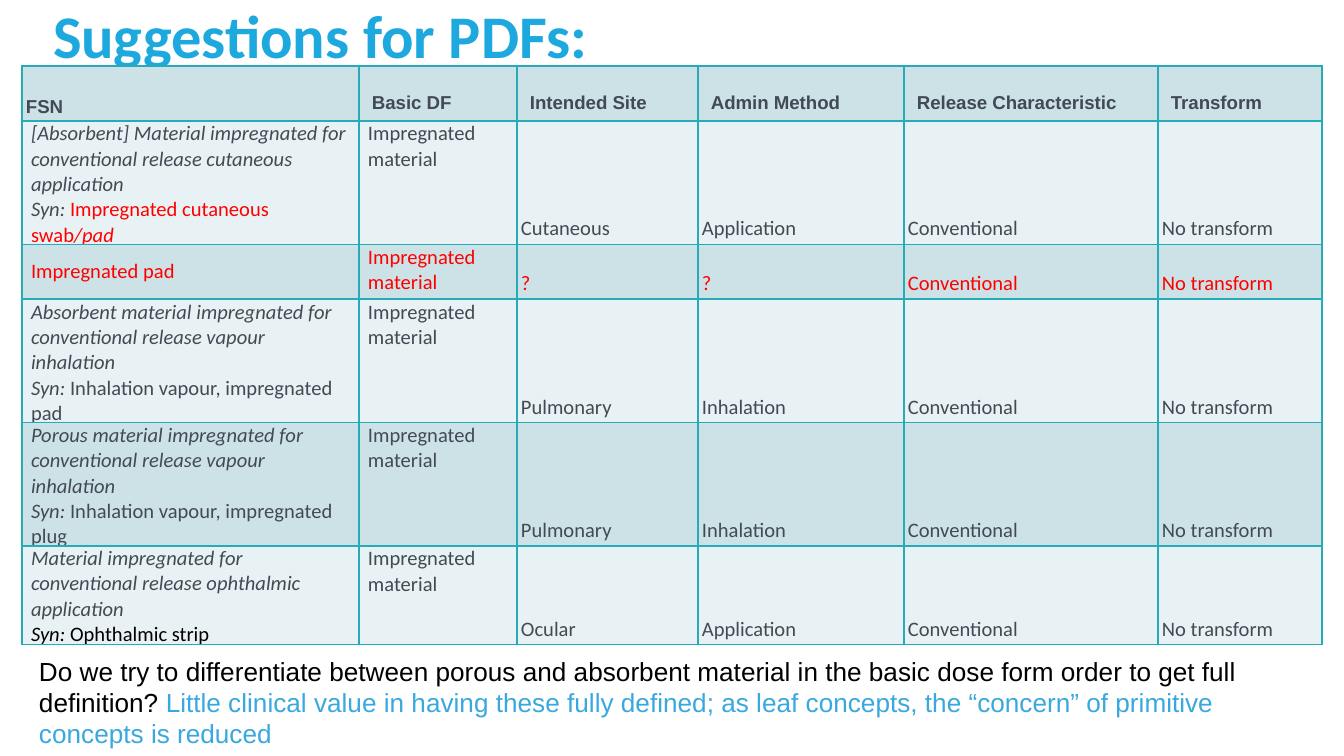
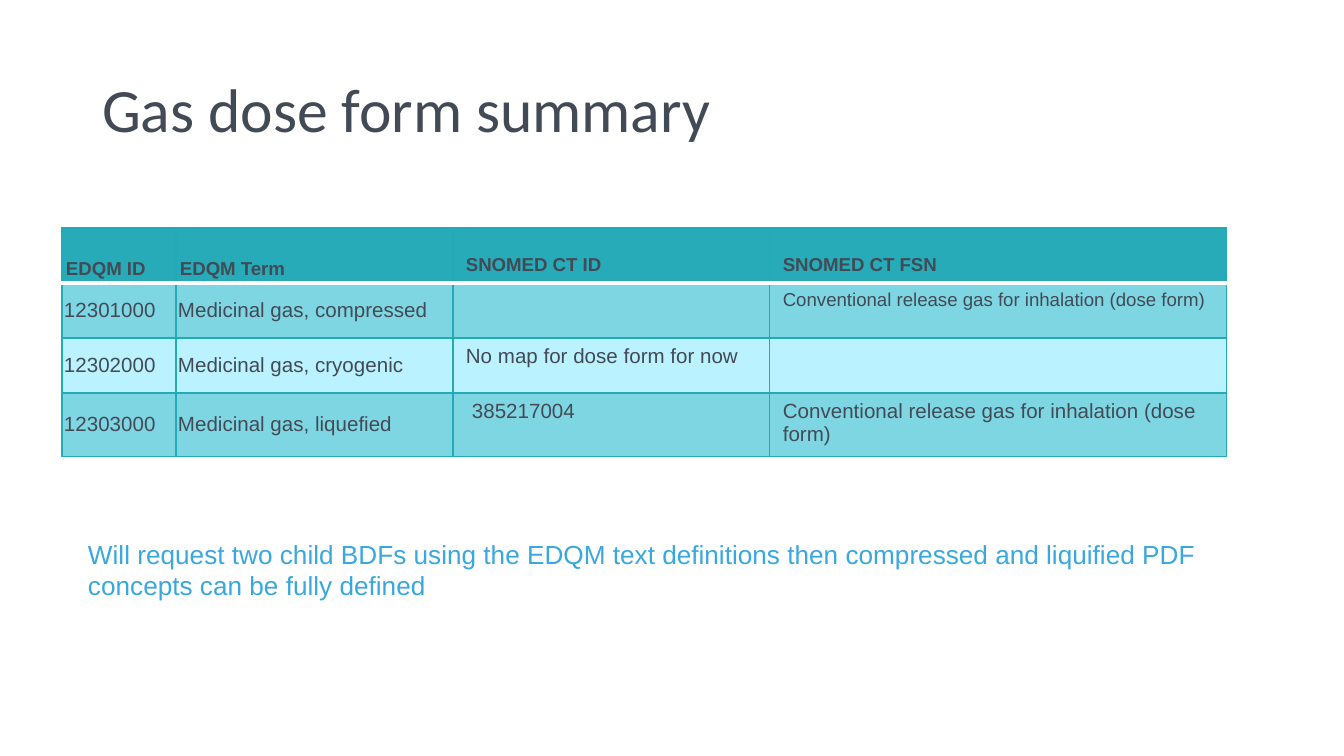
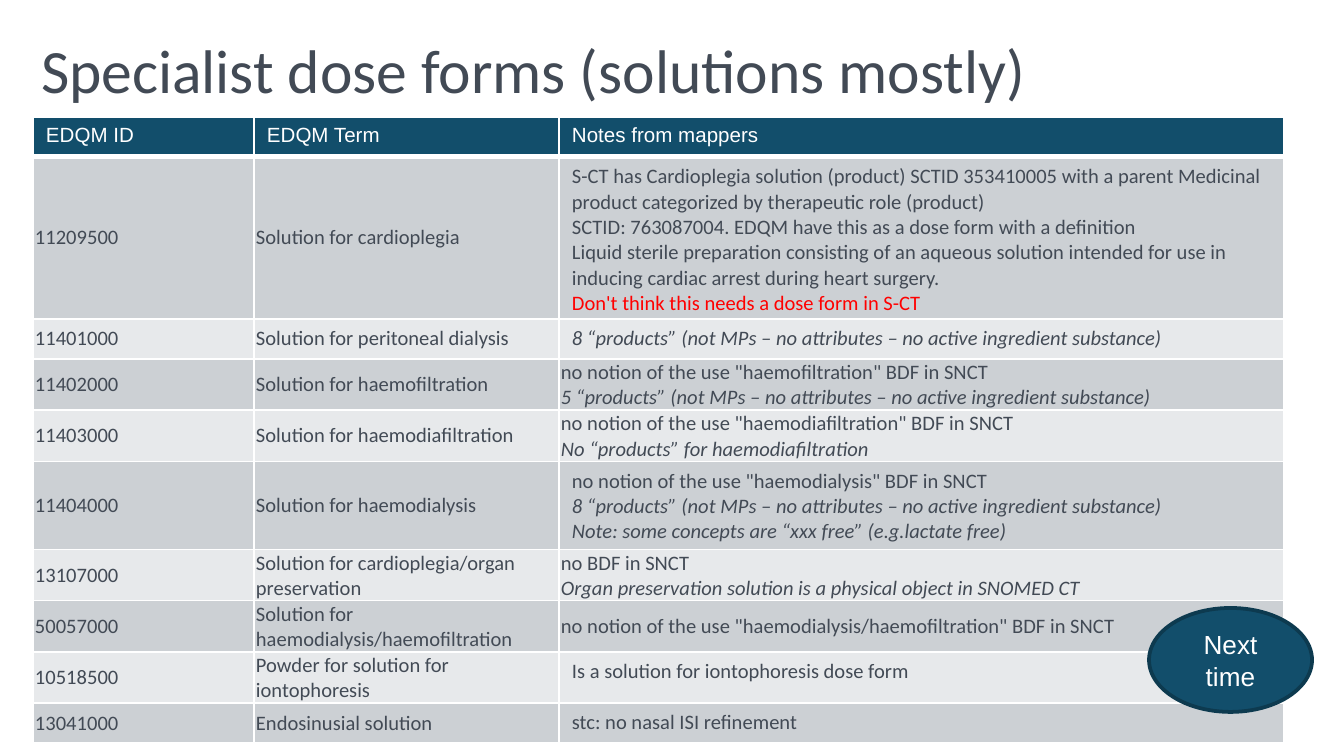
from copy import deepcopy
from dataclasses import dataclass, replace
from typing import NamedTuple

from lxml import etree
from pptx import Presentation
from pptx.dml.color import RGBColor
from pptx.enum.shapes import MSO_SHAPE
from pptx.enum.text import MSO_ANCHOR, MSO_AUTO_SIZE, PP_ALIGN
from pptx.oxml.ns import qn
from pptx.util import Emu, Pt

OVAL = MSO_SHAPE.OVAL
TOP, MIDDLE, BOTTOM = MSO_ANCHOR.TOP, MSO_ANCHOR.MIDDLE, MSO_ANCHOR.BOTTOM
FIT_SHAPE = MSO_AUTO_SIZE.SHAPE_TO_FIT_TEXT
CENTER = PP_ALIGN.CENTER
EMU_PER_PX = 914400 / 134.4


@dataclass(frozen=True)
class TextStyle:
    font: str
    size: float
    color: str
    bold: bool = False
    italic: bool = False


@dataclass(frozen=True)
class Theme:
    ink: str = "424A55"
    black: str = "000000"
    white: str = "FFFFFF"
    red: str = "FF0000"
    sky: str = "39A8DE"
    bright: str = "1DA8DE"
    teal: str = "27ABB8"
    teal_line: str = "23AAB7"
    teal_bands: tuple[str, str] = ("7ED6E2", "BAF2FF")
    pale_bands: tuple[str, str] = ("E8F1F3", "CDE2E6")
    grey_bands: tuple[str, str] = ("CCD0D4", "E7E9EB")
    navy: str = "124E6B"
    navy_line: str = "0D3A4F"
    sans: str = "Arial"
    humanist: str = "Calibri"
    title_size: float = 33
    accent_title_size: float = 32.4
    note_size: float = 14
    cell_size: float = 11
    small_size: float = 10


THEME = Theme()
TITLE = TextStyle(THEME.humanist, THEME.title_size, THEME.ink)
ACCENT_TITLE = TextStyle(THEME.humanist, THEME.accent_title_size, THEME.bright, bold=True)
NOTE = TextStyle(THEME.sans, THEME.note_size, THEME.sky)
QUESTION = replace(NOTE, color=THEME.black)
BADGE = replace(NOTE, color=THEME.white)
BODY = TextStyle(THEME.humanist, THEME.cell_size, THEME.ink)
ITALIC = replace(BODY, italic=True)
RED = replace(BODY, color=THEME.red)
RED_ITALIC = replace(RED, italic=True)
BLACK = replace(BODY, color=THEME.black)
BLACK_ITALIC = replace(BLACK, italic=True)
SANS = replace(BODY, font=THEME.sans)
SMALL_SANS = replace(SANS, size=THEME.small_size)
HEADING = replace(SMALL_SANS, bold=True)
WHITE_HEADING = replace(SANS, color=THEME.white)


class Box(NamedTuple):
    left: int
    top: int
    width: int
    height: int


class Pad(NamedTuple):
    side: int
    end: int


ROOMY, TITLE_PAD, SIDE_ONLY = Pad(13, 7), Pad(9, 5), Pad(9, 0)
NARROW, TIGHT, INDENTED = Pad(4, 3), Pad(2, 1), Pad(19, 7)


class Run(NamedTuple):
    text: str
    style: TextStyle


Paragraphs = list[list[Run]]


@dataclass(frozen=True)
class Cell:
    paragraphs: Paragraphs
    pad: Pad = ROOMY
    anchor: MSO_ANCHOR = TOP


class Line(NamedTuple):
    color: str
    points: float


@dataclass(frozen=True)
class Grid:
    left: int
    top: int
    columns: list[int]
    row_heights: list[int]
    header_fill: str
    bands: tuple[str, str]
    line: Line
    header_rule: Line


def px(count: int) -> Emu:
    return Emu(round(count * EMU_PER_PX))


def rgb(color: str) -> RGBColor:
    return RGBColor.from_string(color)


def write_run(paragraph, run: Run) -> None:
    """Add a run, turning each newline in it into a line break of the same size."""
    style = run.style
    font_values = {"name": style.font, "size": Pt(style.size),
                   "bold": style.bold, "italic": style.italic}
    for number, line in enumerate(run.text.split("\n")):
        if number:
            paragraph.add_line_break()
            paragraph._p[-1].append(deepcopy(text_run._r.get_or_add_rPr()))
        text_run = paragraph.add_run()
        text_run.text = line
        for name, value in font_values.items():
            setattr(text_run.font, name, value)
        text_run.font.color.rgb = rgb(style.color)


def write(frame, paragraphs: Paragraphs, **paragraph_format) -> None:
    for number, runs in enumerate(paragraphs):
        paragraph = frame.add_paragraph() if number else frame.paragraphs[0]
        for name, value in paragraph_format.items():
            setattr(paragraph, name, value)
        for run in runs:
            write_run(paragraph, run)


def set_margins(target, pad: Pad) -> None:
    margins = {"left": pad.side, "right": pad.side, "top": pad.end, "bottom": pad.end}
    for side, length in margins.items():
        setattr(target, f"margin_{side}", px(length))


def add_text(slide, box: Box, runs: list[Run], pad: Pad = ROOMY,
             frame_format: dict | None = None, **paragraph_format) -> None:
    frame = slide.shapes.add_textbox(*map(px, box)).text_frame
    for name, value in {"word_wrap": True, **(frame_format or {})}.items():
        setattr(frame, name, value)
    set_margins(frame, pad)
    write(frame, [runs], **paragraph_format)


def add_title(slide, box: Box, text: str, style: TextStyle = TITLE) -> None:
    add_text(slide, box, [Run(text, style)], TITLE_PAD,
             {"vertical_anchor": MIDDLE}, line_spacing=0.9)


def add_note(slide, box: Box, runs: list[Run]) -> None:
    add_text(slide, box, runs, frame_format={"auto_size": FIT_SHAPE})


def add_badge(slide, box: Box, text: str) -> None:
    badge = slide.shapes.add_shape(OVAL, *map(px, box))
    badge.shadow.inherit = False
    badge.fill.solid()
    badge.fill.fore_color.rgb = rgb(THEME.navy)
    badge.line.color.rgb = rgb(THEME.navy_line)
    badge.line.width = Pt(2)
    badge.text_frame.word_wrap = True
    badge.text_frame.vertical_anchor = MIDDLE
    write(badge.text_frame, [[Run(text, BADGE)]], alignment=CENTER)


def add_border(cell, side: str, line: Line) -> None:
    properties = cell._tc.get_or_add_tcPr()
    border = etree.SubElement(properties, qn(f"a:ln{side}"), w=str(Pt(line.points)))
    fill = etree.SubElement(border, qn("a:solidFill"))
    etree.SubElement(fill, qn("a:srgbClr"), val=line.color)


def add_grid(slide, grid: Grid, rows: list[list[Cell]]) -> None:
    box = Box(grid.left, grid.top, sum(grid.columns), sum(grid.row_heights))
    table = slide.shapes.add_table(len(rows), len(grid.columns), *map(px, box)).table
    table.first_row = table.horz_banding = False
    for column, width in zip(table.columns, grid.columns):
        column.width = px(width)
    for r, (cells, height) in enumerate(zip(rows, grid.row_heights)):
        table.rows[r].height = px(height)
        borders = {"L": grid.line, "R": grid.line,
                   "T": grid.header_rule if r == 1 else grid.line,
                   "B": grid.header_rule if r == 0 else grid.line}
        for c, content in enumerate(cells):
            cell = table.cell(r, c)
            for side, line in borders.items():
                add_border(cell, side, line)
            cell.fill.solid()
            cell.fill.fore_color.rgb = rgb(grid.bands[(r - 1) % 2] if r else grid.header_fill)
            set_margins(cell, content.pad)
            cell.vertical_anchor = content.anchor
            write(cell.text_frame, content.paragraphs)


def plain(text: str, style: TextStyle = BODY, pad: Pad = ROOMY,
          anchor: MSO_ANCHOR = TOP) -> Cell:
    return Cell([[Run(text, style)]] if text else [], pad, anchor)


def lines(*runs: Run, pad: Pad = TIGHT, anchor: MSO_ANCHOR = MIDDLE) -> Cell:
    """A cell with one paragraph for each run."""
    return Cell([[run] for run in runs], pad, anchor)


def headings(labels: list[str], narrow_count: int) -> list[Cell]:
    return [plain(label, HEADING, NARROW if c < narrow_count else ROOMY, BOTTOM)
            for c, label in enumerate(labels)]


def material_row(name: Paragraphs, site: str, method: str,
                 style: TextStyle = BODY, name_anchor: MSO_ANCHOR = MIDDLE) -> list[Cell]:
    attributes = [site, method, "Conventional", "No transform"]
    return [Cell(name, SIDE_ONLY, name_anchor),
            plain("Impregnated material", style, SIDE_ONLY),
            *(plain(text, style, NARROW, BOTTOM) for text in attributes)]


def synonym_name(name: str, *synonym: Run, label: TextStyle = ITALIC) -> Paragraphs:
    return [[Run(name, ITALIC)], [Run("Syn: ", label), *synonym]]


def build_suggestions(slide) -> None:
    add_title(slide, Box(44, 0, 1134, 77), "Suggestions for PDFs:", ACCENT_TITLE)
    teal_line = Line(THEME.teal, 1)
    grid = Grid(22, 66, [337, 158, 181, 206, 254, 164], [55] * 6,
                THEME.pale_bands[1], THEME.pale_bands, teal_line, teal_line)
    add_grid(slide, grid, [
        headings(["FSN", "Basic DF", "Intended Site", "Admin Method",
                  "Release Characteristic", "Transform"], 1),
        material_row(synonym_name(
            "[Absorbent] Material impregnated for conventional release cutaneous application",
            Run("Impregnated cutaneous swab", RED), Run("/pad", RED_ITALIC)),
            "Cutaneous", "Application"),
        material_row([[Run("Impregnated pad", RED)]], "?", "?", RED),
        material_row(synonym_name(
            "Absorbent material impregnated for conventional release vapour inhalation",
            Run("Inhalation vapour, impregnated pad", BODY)), "Pulmonary", "Inhalation"),
        material_row(synonym_name(
            "Porous material impregnated for conventional release vapour inhalation",
            Run("Inhalation vapour, impregnated plug", BODY)), "Pulmonary", "Inhalation"),
        material_row(synonym_name(
            "Material impregnated for conventional release ophthalmic application",
            Run("Ophthalmic strip", BLACK), label=BLACK_ITALIC),
            "Ocular", "Application", name_anchor=BOTTOM),
    ])
    add_note(slide, Box(26, 648, 1309, 109), [
        Run("Do we try to differentiate between porous and absorbent material in the basic "
            "dose form order to get full definition? ", QUESTION),
        Run("Little clinical value in having these fully defined; as leaf concepts, the "
            "“concern” of primitive concepts is reduced", NOTE)])


def build_gas_summary(slide) -> None:
    add_title(slide, Box(93, 40, 1158, 146), "Gas dose form summary")
    grid = Grid(62, 228, [114, 277, 317, 457], [55] * 4, THEME.teal,
                THEME.teal_bands, Line(THEME.teal_line, 0.75), Line(THEME.white, 2))
    inhaled_gas = "Conventional release gas for inhalation (dose form)"
    gases = [
        ("12301000", "compressed", plain(""), plain(inhaled_gas, SMALL_SANS)),
        ("12302000", "cryogenic", plain("No map for dose form for now", SANS), plain("")),
        ("12303000", "liquefied", plain("385217004", SANS, INDENTED),
         plain(inhaled_gas, SANS)),
    ]
    add_grid(slide, grid, [
        headings(["EDQM ID", "EDQM Term", "SNOMED CT ID", "SNOMED CT FSN"], 2),
        *([plain(edqm_id, SANS, TIGHT, MIDDLE),
           plain(f"Medicinal gas, {state}", SANS, TIGHT, MIDDLE), concept_id, fsn]
          for edqm_id, state, concept_id, fsn in gases)])
    add_note(slide, Box(75, 531, 1152, 77), [
        Run("Will request two child BDFs using the EDQM text definitions then compressed "
            "and liquified PDF concepts can be fully defined", NOTE)])


def no_notion(use: str) -> Run:
    return Run(f'no notion of the use "{use}" BDF in SNCT', BODY)


def product_count(count: int) -> Run:
    return Run(f"{count} “products” (not MPs – no attributes – "
               "no active ingredient substance)", ITALIC)


def build_specialist_forms(slide) -> None:
    add_title(slide, Box(32, 17, 1158, 114), "Specialist dose forms (solutions mostly)")
    grid = Grid(33, 117, [221, 305, 725], [40, 157, 40, 51, 51, 85, 51, 51, 51, 40],
                THEME.navy, THEME.grey_bands, Line(THEME.white, 1), Line(THEME.white, 3))
    cardioplegia = Cell([[
        Run("""S-CT has Cardioplegia solution (product) SCTID 353410005 with a parent Medicinal \
product categorized by therapeutic role (product)
SCTID: 763087004. EDQM have this as a dose form with a definition
Liquid sterile preparation consisting of an aqueous solution intended for use in \
inducing cardiac arrest during heart surgery.
""", BODY),
        Run("Don't think this needs a dose form in S-CT", RED)]])
    dose_forms = [
        ("11209500", "Solution for cardioplegia", cardioplegia),
        ("11401000", "Solution for peritoneal dialysis",
         lines(product_count(8), pad=ROOMY, anchor=TOP)),
        ("11402000", "Solution for haemofiltration",
         lines(no_notion("haemofiltration"), product_count(5))),
        ("11403000", "Solution for haemodiafiltration",
         lines(no_notion("haemodiafiltration"),
               Run("No “products” for haemodiafiltration", ITALIC))),
        ("11404000", "Solution for haemodialysis",
         lines(no_notion("haemodialysis"), product_count(8),
               Run("Note: some concepts are “xxx free” (e.g.lactate free)", ITALIC),
               pad=ROOMY, anchor=TOP)),
        ("13107000", "Solution for cardioplegia/organ preservation",
         lines(Run("no BDF in SNCT", BODY),
               Run("Organ preservation solution is a physical object in SNOMED CT", ITALIC))),
        ("50057000", "Solution for haemodialysis/haemofiltration",
         lines(no_notion("haemodialysis/haemofiltration"))),
        ("10518500", "Powder for solution for iontophoresis",
         plain("Is a solution for iontophoresis dose form")),
        ("13041000", "Endosinusial solution", plain("stc: no nasal ISI refinement")),
    ]
    add_grid(slide, grid, [
        [plain(label, WHITE_HEADING) for label in ("EDQM ID", "EDQM Term", "Notes from mappers")],
        *([plain(edqm_id, BODY, TIGHT, MIDDLE), plain(term, BODY, TIGHT, MIDDLE), notes]
          for edqm_id, term, notes in dose_forms)])
    add_badge(slide, Box(1149, 608, 163, 104), "Next time")


def main() -> None:
    presentation = Presentation()
    presentation.slide_width, presentation.slide_height = px(1344), px(756)
    blank_layout = presentation.slide_layouts[6]
    for build in (build_suggestions, build_gas_summary, build_specialist_forms):
        build(presentation.slides.add_slide(blank_layout))
    presentation.save("out.pptx")


if __name__ == "__main__":
    main()
